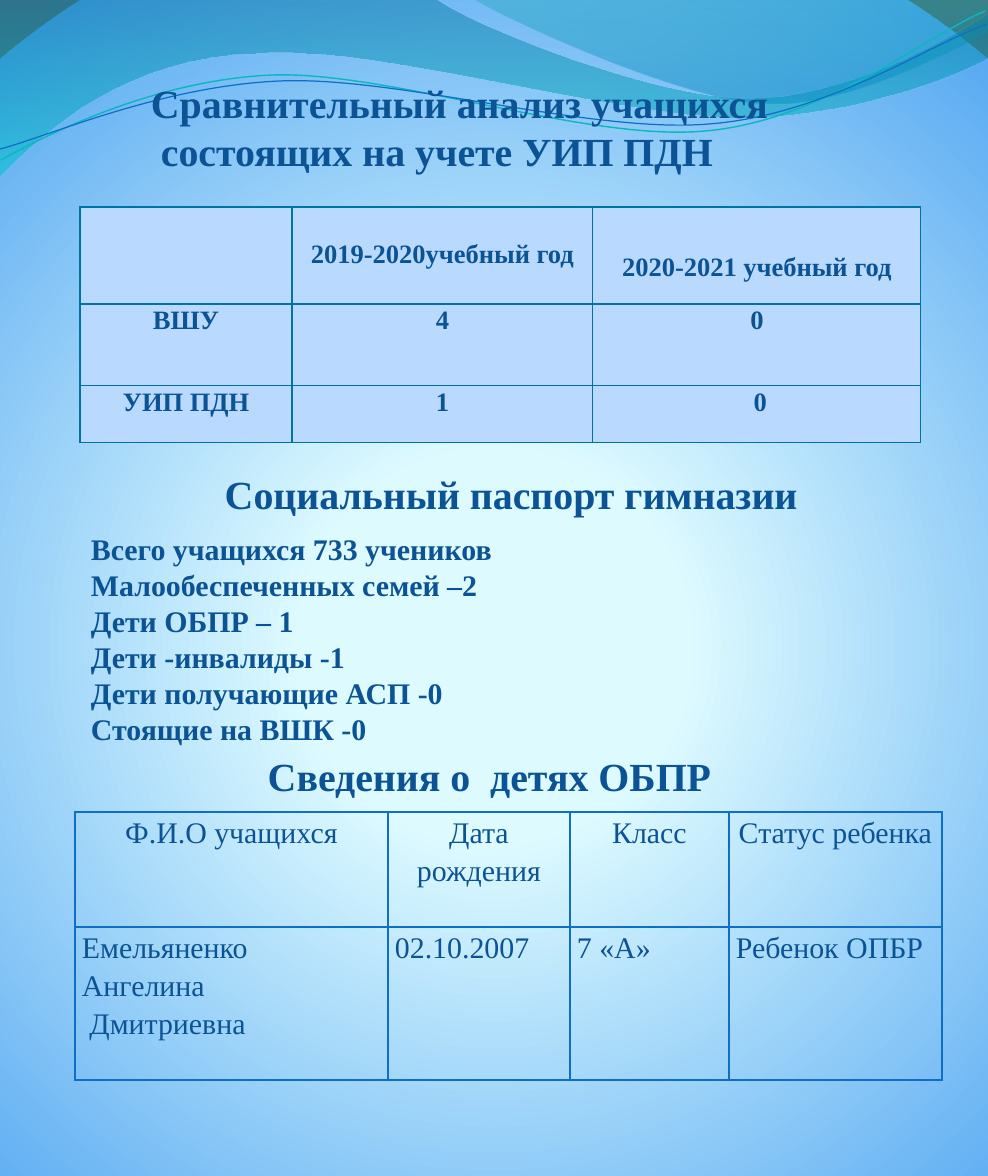
"""Build a school report slide with two tables, a summary list and a wave header."""
from itertools import chain

from pptx import Presentation
from pptx.dml.color import RGBColor
from pptx.enum.text import MSO_ANCHOR, MSO_AUTO_SIZE, PP_ALIGN
from pptx.oxml import parse_xml
from pptx.oxml.ns import nsdecls, qn
from pptx.util import Pt

LEFT, CENTER = PP_ALIGN.LEFT, PP_ALIGN.CENTER
TOP, NO_AUTOFIT = MSO_ANCHOR.TOP, MSO_AUTO_SIZE.NONE
EMU_PER_PX = 914400 / 119.5
FONT = "Times New Roman"
COLORS = {
    "text": "0B5394", "cell": "B9DAFE", "teal border": "0074A1", "blue border": "0F6FC6",
    "glow": "DDFAFF", "sky": "59AAF2", "slate": "52767C",
    "deep": "0074A1", "aqua": "00C6CF", "sea": "00A1A9", "azure": "008BBF",
    "teal line": "0AB8BF", "blue line": "0F6FC6",
}

SLIDE_SIZE = (988, 1176)
BACKGROUND_STOPS = [(25, "glow", 100), (100, "sky", 100), (100, "slate", 100)]
BACKGROUND_PATH = '<a:path path="circle"><a:fillToRect l="10000" t="110000" r="10000" b="100000"/></a:path>'
DOWNWARD = '<a:lin ang="5400000" scaled="1"/>'

WAVES = [
    ([(0, "deep", 45), (100, "aqua", 55)],
     [[(0, -1)], [(435, -1)], [(470, 26), (656, 99), (749, 99)], [(842, 99), (946, 41), (988, 14)],
      [(989, 57)], [(972, 69), (859, 118), (737, 118)], [(614, 118), (378, 44), (255, 54)],
      [(128, 56), (45, 130), (-1, 177)], [(0, -1)]]),
    ([(0, "sea", 30), (80, "azure", 45)],
     [[(473, -1)], [(503, 18), (674, 97), (760, 103)], [(845, 109), (950, 50), (988, 33)],
      [(988, 0)], [(473, -1)]]),
]
WAVE_LINES = [
    ("teal line", 0.85,
     [[(1, 160)], [(48, 134), (155, 80), (272, 75)], [(390, 71), (587, 142), (705, 131)],
      [(823, 121), (926, 36), (985, 11)]]),
    ("blue line", 0.75,
     [[(0, 149)], [(47, 137), (161, 86), (280, 81)], [(398, 76), (592, 134), (709, 124)],
      [(827, 115), (930, 44), (987, 24)]]),
]

TITLE = ["Сравнительный анализ учащихся", " состоящих на учете УИП ПДН"]
TITLE_BOX = (139, 73, 673, 145)
PASSPORT = [
    "Всего учащихся 733 учеников", "Малообеспеченных семей –2", "Дети ОБПР – 1",
    "Дети -инвалиды -1", "Дети получающие АСП -0", "Стоящие на ВШК -0",
]
PASSPORT_BOX = (79, 525, 452, 229)
HEADINGS = [
    ("Социальный паспорт гимназии", (213, 464, 603, 60)),
    ("Сведения о  детях ОБПР", (256, 746, 482, 97)),
]
TABLES = [
    {"at": (80, 207), "columns": (212, 301, 328), "rows": (97, 82, 57),
     "border": ("teal border", 0.75), "fill": "cell", "size": 16, "bold": True, "spacing": 1.07,
     "aligns": (CENTER, CENTER, CENTER), "insets": {(0, 1): 31, (0, 2): 44},
     "cells": [["", "2019-2020учебный год", "2020-2021 учебный год"],
               ["ВШУ", "4", "0"],
               ["УИП ПДН", "1", " 0"]]},
    {"at": (75, 812), "columns": (313, 182, 159, 213), "rows": (115, 153),
     "border": ("blue border", 1), "fill": None, "size": 18, "bold": False, "spacing": 1.15,
     "aligns": (CENTER, LEFT), "insets": {},
     "cells": [["Ф.И.О учащихся", "Дата рождения", "Класс", "Статус ребенка"],
               ["Емельяненко\nАнгелина\n Дмитриевна", "02.10.2007", "7 «А»", "Ребенок ОПБР"]]},
]


def px(length):
    return round(length * EMU_PER_PX)


def color(name):
    return RGBColor.from_string(COLORS[name])


def write(frame, lines, size, bold, spacing=1.0, align=LEFT):
    for index, line in enumerate(lines):
        paragraph = frame.paragraphs[0] if index == 0 else frame.add_paragraph()
        paragraph.alignment = align
        paragraph.line_spacing = spacing
        paragraph.space_before = Pt(0)
        run = paragraph.add_run()
        run.text = line
        run.font.name = FONT
        run.font.size = Pt(size)
        run.font.bold = bold
        run.font.color.rgb = color("text")


def place(shape, box):
    shape.left, shape.top, shape.width, shape.height = map(px, box)
    frame = shape.text_frame
    frame.auto_size = NO_AUTOFIT
    frame.vertical_anchor = TOP
    frame.word_wrap = True
    return frame


def set_gradient(parent, stops, direction):
    stop_xml = "".join(
        f'<a:gs pos="{position * 1000}"><a:srgbClr val="{COLORS[name]}">'
        f'<a:alpha val="{alpha * 1000}"/></a:srgbClr></a:gs>'
        for position, name, alpha in stops)
    gradient = parse_xml(f'<a:gradFill {nsdecls("a")} rotWithShape="1">'
                         f'<a:gsLst>{stop_xml}</a:gsLst>{direction}</a:gradFill>')
    parent.replace(parent.find(qn("a:gradFill")), gradient)


def add_curve(slide, segments, close):
    points = [(px(x), px(y)) for x, y in chain.from_iterable(segments)]
    builder = slide.shapes.build_freeform(*points[0])
    builder.add_line_segments(points[1:], close=close)
    shape = builder.convert_to_shape()
    shape.shadow.inherit = False
    outline = shape._element.spPr.find(".//" + qn("a:path"))
    lines = iter(outline.findall(qn("a:lnTo")))
    for segment in segments[1:]:
        steps = [next(lines) for _ in segment]
        if len(steps) == 3:
            curve = parse_xml(f'<a:cubicBezTo {nsdecls("a")}/>')
            steps[0].addprevious(curve)
            for step in steps:
                curve.append(step[0])
                outline.remove(step)
    return shape


def add_waves(slide):
    for stops, segments in WAVES:
        wave = add_curve(slide, segments, True)
        wave.line.fill.background()
        wave.fill.gradient()
        set_gradient(wave._element.spPr, stops, DOWNWARD)
    for name, width, segments in WAVE_LINES:
        curve = add_curve(slide, segments, False)
        curve.fill.background()
        curve.line.color.rgb = color(name)
        curve.line.width = Pt(width)


def set_borders(cell, name, width):
    properties = cell._tc.get_or_add_tcPr()
    for index, side in enumerate("LRTB"):
        properties.insert(index, parse_xml(
            f'<a:ln{side} {nsdecls("a")} w="{Pt(width)}"><a:solidFill>'
            f'<a:srgbClr val="{COLORS[name]}"/></a:solidFill></a:ln{side}>'))


def add_report_table(slide, data):
    columns, rows = data["columns"], data["rows"]
    size = (sum(columns), sum(rows))
    table = slide.shapes.add_table(len(rows), len(columns), *map(px, data["at"] + size)).table
    table.first_row = table.horz_banding = False
    for column, width in zip(table.columns, columns):
        column.width = px(width)
    for row_index, (row, height) in enumerate(zip(table.rows, rows)):
        row.height = px(height)
        for column_index, text in enumerate(data["cells"][row_index]):
            cell = table.cell(row_index, column_index)
            cell.margin_left = cell.margin_right = px(7)
            cell.margin_top = px(data["insets"].get((row_index, column_index), 0))
            cell.margin_bottom = 0
            if data["fill"]:
                cell.fill.solid()
                cell.fill.fore_color.rgb = color(data["fill"])
            else:
                cell.fill.background()
            set_borders(cell, *data["border"])
            if text:
                write(cell.text_frame, text.split("\n"), data["size"], data["bold"],
                      data["spacing"], data["aligns"][row_index])


def main():
    presentation = Presentation()
    presentation.slide_width, presentation.slide_height = map(px, SLIDE_SIZE)
    slide = presentation.slides.add_slide(presentation.slide_layouts[1])
    slide.background.fill.gradient()
    set_gradient(slide._element.cSld.bg.bgPr, BACKGROUND_STOPS, BACKGROUND_PATH)
    add_waves(slide)

    title, body = slide.placeholders
    for placeholder in (title, body):
        slide.shapes._spTree.append(placeholder._element)
    write(place(title, TITLE_BOX), TITLE, 24, True)
    passport = place(body, PASSPORT_BOX)
    write(passport, PASSPORT, 18, True)
    for paragraph in passport.paragraphs:
        properties = paragraph._p.get_or_add_pPr()
        properties.set("marL", "0")
        properties.set("indent", "0")
        properties.append(parse_xml(f'<a:buNone {nsdecls("a")}/>'))
    for text, box in HEADINGS:
        write(place(slide.shapes.add_textbox(0, 0, 0, 0), box), [text], 24, True)
    for data in TABLES:
        add_report_table(slide, data)
    presentation.save("out.pptx")


if __name__ == "__main__":
    main()
